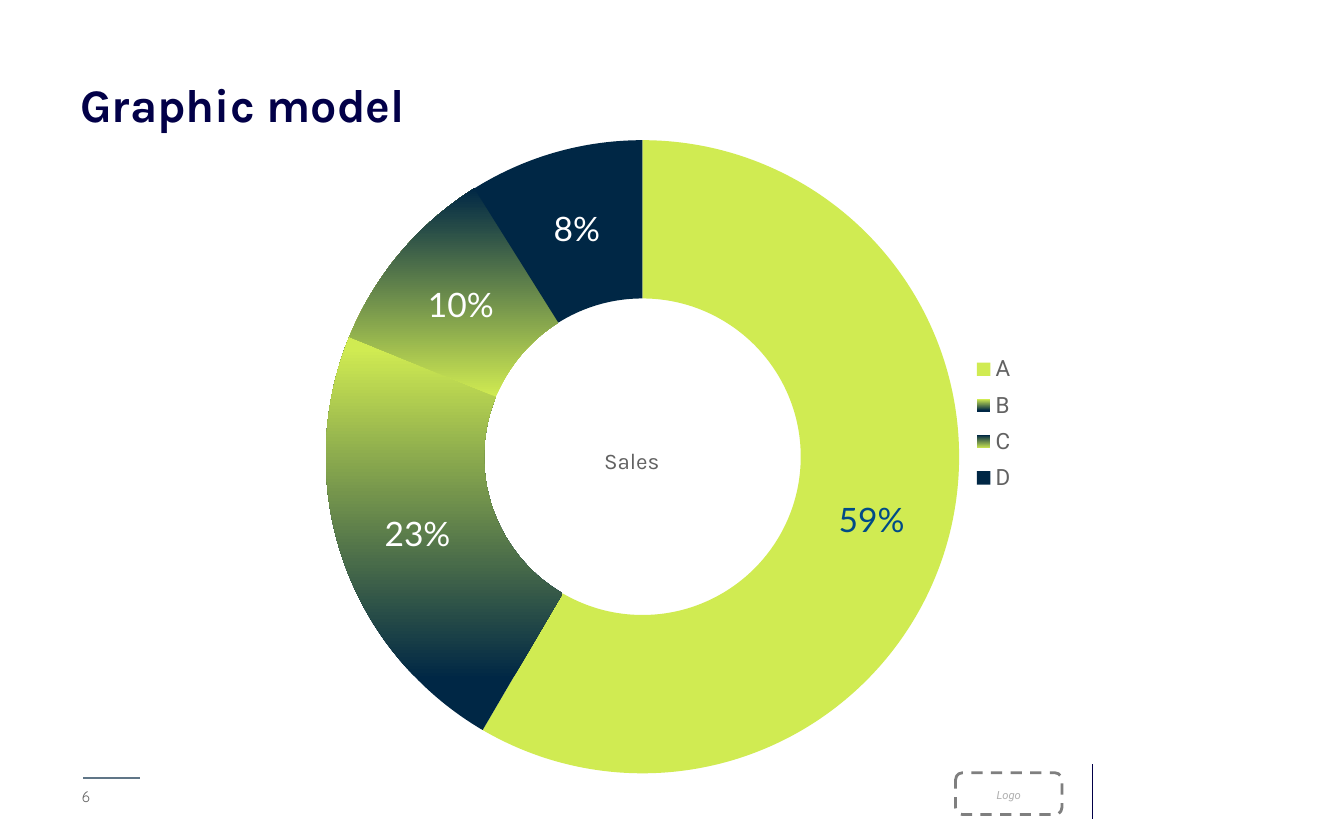
from typing import NamedTuple, Optional

from lxml.etree import SubElement
from pptx import Presentation
from pptx.chart.data import CategoryChartData
from pptx.dml.color import RGBColor
from pptx.enum.chart import XL_CHART_TYPE, XL_LEGEND_POSITION
from pptx.enum.dml import MSO_LINE
from pptx.enum.shapes import MSO_CONNECTOR, MSO_SHAPE
from pptx.enum.text import MSO_ANCHOR, PP_ALIGN
from pptx.oxml.ns import qn
from pptx.util import Cm, Pt

WHITE = RGBColor(0xFF, 0xFF, 0xFF)
NAVY = RGBColor(0x02, 0x00, 0x48)
DEEP_BLUE = RGBColor(0x00, 0x27, 0x45)
LABEL_BLUE = RGBColor(0x00, 0x4B, 0x87)
LIME = RGBColor(0xD0, 0xEB, 0x52)
SLATE = RGBColor(0x60, 0x76, 0x87)
TEXT_GREY = RGBColor(0x62, 0x62, 0x62)
FRAME_GREY = RGBColor(0x7F, 0x7F, 0x7F)
LOGO_GREY = RGBColor(0xB0, 0xB0, 0xB0)


class Label(NamedTuple):
    text: str
    box: tuple  # left, top, width, height in cm
    color: RGBColor
    format: dict
    align: PP_ALIGN = PP_ALIGN.LEFT
    anchor: MSO_ANCHOR = MSO_ANCHOR.TOP


class Rule(NamedTuple):
    start: tuple
    end: tuple
    color: RGBColor


class Slice(NamedTuple):
    name: str
    value: int
    stops: tuple  # (position, colour) pairs, from bottom to top
    label_color: RGBColor = WHITE
    label: Optional[str] = None  # fixed wording instead of the percentage


LABELS = [
    Label("Graphic model", (1.27, 0.64, 15.24, 2.64), NAVY,
          {"name": "Karla", "size": Pt(25), "bold": True}, anchor=MSO_ANCHOR.MIDDLE),
    Label("6", (1.3, 14.76, 1.07, 0.61), TEXT_GREY, {"name": "Quicksand", "size": Pt(8)}),
    Label("Logo", (18.06, 14.78, 2.01, 0.51), LOGO_GREY,
          {"name": "Roboto", "size": Pt(6), "italic": True}, PP_ALIGN.CENTER),
]
RULES = [
    Rule((1.57, 14.71), (2.64, 14.71), SLATE),
    Rule((20.65, 14.45), (20.65, 15.49), NAVY),
]
SLICES = [
    Slice("A", 59, ((0, LIME),), LABEL_BLUE, "59%"),
    Slice("B", 23, ((0.13, DEEP_BLUE), (0.97, LIME))),
    Slice("C", 10, ((0, LIME), (1, DEEP_BLUE))),
    Slice("D", 9, ((0, DEEP_BLUE),), label="8%"),
]
SHARE_FORMAT = {"name": "Lato", "size": Pt(18)}


def apply_font(font, color: RGBColor, values: dict) -> None:
    for attribute, value in values.items():
        setattr(font, attribute, value)
    font.color.rgb = color


def draw_label(slide, label: Label) -> None:
    frame = slide.shapes.add_textbox(*map(Cm, label.box)).text_frame
    frame.word_wrap = True
    frame.vertical_anchor = label.anchor
    paragraph = frame.paragraphs[0]
    paragraph.alignment = label.align
    run = paragraph.add_run()
    run.text = label.text
    apply_font(run.font, label.color, label.format)


def draw_rule(slide, rule: Rule) -> None:
    line = slide.shapes.add_connector(
        MSO_CONNECTOR.STRAIGHT, *map(Cm, rule.start + rule.end))
    line.line.color.rgb = rule.color
    line.line.width = Pt(0.75)
    SubElement(line._element.spPr, qn("a:effectLst"))


def draw_logo_frame(slide) -> None:
    frame = slide.shapes.add_shape(
        MSO_SHAPE.ROUNDED_RECTANGLE, *map(Cm, (18.06, 14.61, 2.01, 0.79)))
    frame.shadow.inherit = False
    frame.fill.background()
    frame.line.color.rgb = FRAME_GREY
    frame.line.width = Pt(1.5)
    frame.line.dash_style = MSO_LINE.DASH


def place(part, index: int, inner: bool = False, **fractions: float) -> None:
    """Give a chart part a manual place, as fractions of the chart."""
    for old in part.findall(qn("c:layout")):
        part.remove(old)
    layout = SubElement(part, qn("c:layout"))
    part.insert(index, layout)
    manual = SubElement(layout, qn("c:manualLayout"))
    if inner:
        SubElement(manual, qn("c:layoutTarget")).set("val", "inner")
    for axis in "xy":
        SubElement(manual, qn(f"c:{axis}Mode")).set("val", "edge")
    for side, fraction in fractions.items():
        SubElement(manual, qn(f"c:{side}")).set("val", str(fraction))


def format_slice(point, part: Slice) -> None:
    fill = point.format.fill
    if len(part.stops) == 1:
        fill.solid()
        fill.fore_color.rgb = part.stops[0][1]
    else:
        fill.gradient()
        fill.gradient_angle = 90
        for stop, (position, color) in zip(fill.gradient_stops, part.stops):
            stop.position = position
            stop.color.rgb = color
    point.format.line.fill.background()

    share = point.data_label
    if part.label:
        run = share.text_frame.paragraphs[0].add_run()
        run.text = part.label
        apply_font(run.font, part.label_color, SHARE_FORMAT)
    else:
        apply_font(share.font, part.label_color, SHARE_FORMAT)


def draw_doughnut(slide) -> None:
    sales = CategoryChartData()
    sales.categories = [part.name for part in SLICES]
    sales.add_series("Series 1", [part.value for part in SLICES])
    chart = slide.shapes.add_chart(
        XL_CHART_TYPE.DOUGHNUT, *map(Cm, (1.27, 1.12, 22.89, 13.92)), sales).chart
    apply_font(chart.font, TEXT_GREY, {"name": "Calibri", "size": Pt(18)})

    # Slices and their percentages
    plot = chart.plots[0]
    plot.vary_by_categories = True
    series = plot.series[0]
    for index, part in enumerate(SLICES):
        format_slice(series.points[index], part)
    shares = series.data_labels
    shares.show_percentage = True
    shares.show_value = False
    apply_font(shares.font, LABEL_BLUE, {"name": "Lato", "size": Pt(12)})
    for share in chart._chartSpace.iter(qn("c:dLbl")):
        share.find(qn("c:showVal")).set("val", "0")
        share.find(qn("c:showPercent")).set("val", "1")

    # Title in the hole, legend beside the ring
    chart.has_title = True
    title = chart.chart_title.text_frame.paragraphs[0].add_run()
    title.text = "Sales"
    apply_font(title.font, TEXT_GREY, {"name": "Karla", "size": Pt(12), "bold": False})
    chart.has_legend = True
    legend = chart.legend
    legend.position = XL_LEGEND_POSITION.RIGHT
    legend.include_in_layout = False
    apply_font(legend.font, TEXT_GREY, {"name": "Roboto", "size": Pt(12)})

    heading = chart.chart_title._element
    heading.find(qn("c:overlay")).set("val", "1")
    place(heading, 1, x=0.44, y=0.52)
    place(legend._element, 1, x=0.74, y=0.39, w=0.05, h=0.21)
    place(chart._chartSpace.chart.plotArea, 0, inner=True, x=0.21, y=0.11, w=0.53, h=0.86)


def main() -> None:
    deck = Presentation()
    deck.slide_width, deck.slide_height = Cm(25.4), Cm(15.88)
    slide = deck.slides.add_slide(deck.slide_layouts[6])

    # Footer marks
    for rule in RULES:
        draw_rule(slide, rule)
    draw_logo_frame(slide)

    # Chart, then the texts
    draw_doughnut(slide)
    for label in LABELS:
        draw_label(slide, label)
    deck.save("out.pptx")


if __name__ == "__main__":
    main()
